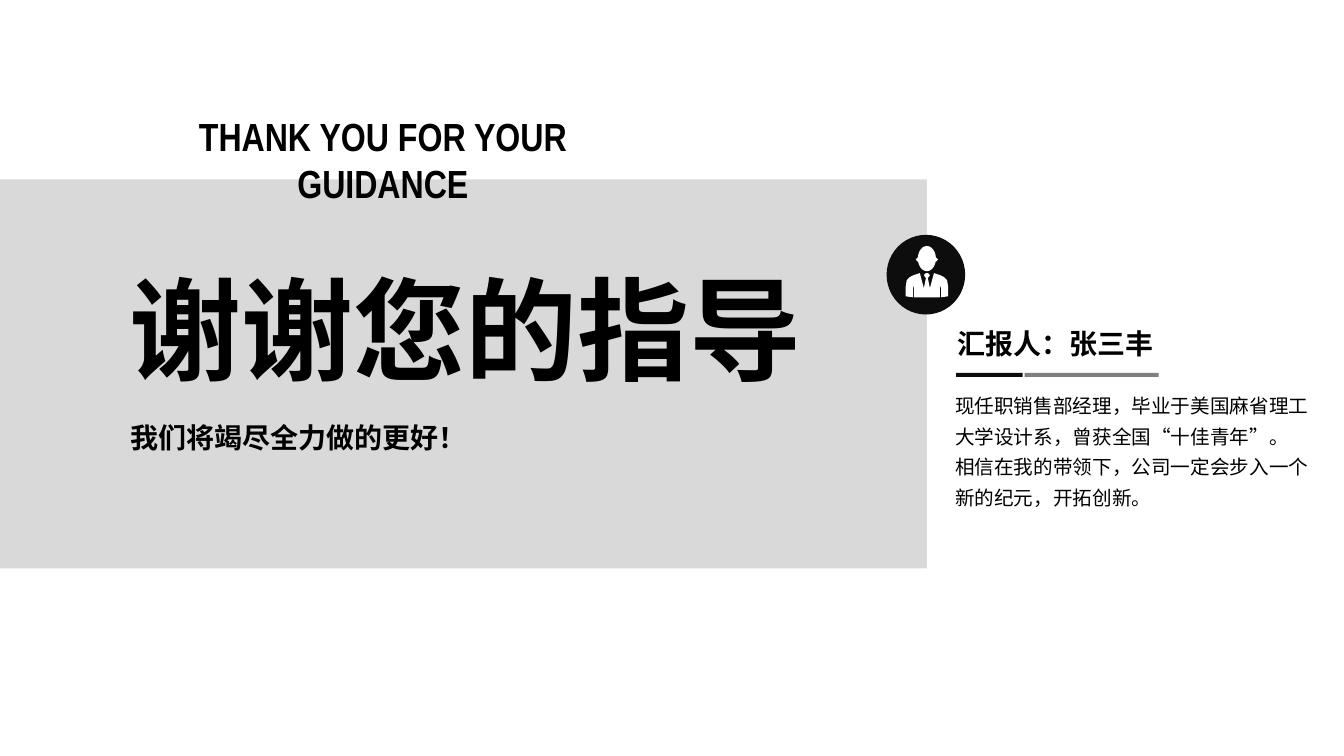
from lxml import etree
from pptx import Presentation
from pptx.dml.color import RGBColor
from pptx.enum.shapes import MSO_SHAPE
from pptx.enum.text import MSO_ANCHOR, PP_ALIGN
from pptx.oxml.ns import qn
from pptx.util import Inches, Pt

RECTANGLE, OVAL = MSO_SHAPE.RECTANGLE, MSO_SHAPE.OVAL
LEFT, CENTER = PP_ALIGN.LEFT, PP_ALIGN.CENTER
TOP, MIDDLE = MSO_ANCHOR.TOP, MSO_ANCHOR.MIDDLE
CHINESE_FONT, LATIN_FONT = "Noto Sans CJK SC", "Arial Narrow"
COLORS = {
    "text": "000000",
    "panel": "D9D9D9",
    "dark": "0D0D0D",
    "gray": "808080",
    "white": "FFFFFF",
}

deck = Presentation()
deck.slide_width, deck.slide_height = Inches(13.34), Inches(7.5)
page = deck.slides.add_slide(deck.slide_layouts[6])


def paint(shape, color):
    """Give a shape a plain fill without line or shadow."""
    shape.shadow.inherit = False
    shape.fill.solid()
    shape.fill.fore_color.rgb = RGBColor.from_string(COLORS[color])
    shape.line.fill.background()


def add_text(text, place, size, font=CHINESE_FONT, bold=True, align=LEFT,
             anchor=TOP, inset=(0.1, 0.05), spacing=None):
    """Add a text box with one paragraph for each line of the text."""
    box = page.shapes.add_textbox(*map(Inches, place))
    frame = box.text_frame
    frame.word_wrap = True
    frame.vertical_anchor = anchor
    frame.margin_left = frame.margin_right = Inches(inset[0])
    frame.margin_top = frame.margin_bottom = Inches(inset[1])
    frame.text = text
    for para in frame.paragraphs:
        para.alignment = align
        para.line_spacing = spacing
        for span in para.runs:
            span.font.size = Pt(size)
            span.font.bold = bold
            span.font.name = font
            span.font.color.rgb = RGBColor.from_string(COLORS["text"])
            east_asian = etree.SubElement(span.font._element, qn("a:ea"))
            east_asian.set("typeface", font)


# Gray panel with the closing words
panel = page.shapes.add_shape(RECTANGLE, 0, Inches(1.78), Inches(9.2), Inches(3.86))
paint(panel, "panel")
add_text("谢谢您的指导", (1.19, 2.54, 7.08, 1.71), 80)
add_text("我们将竭尽全力做的更好！", (0.45, 3.9, 5.03, 0.88), 20,
         align=CENTER, anchor=MIDDLE)
add_text("THANK YOU FOR YOUR GUIDANCE", (1.23, 1.04, 5.14, 1.08), 28,
         font=LATIN_FONT, align=CENTER, inset=(0.13, 0.07))

# Round badge: disc, head and ears, then a suit mirrored about its middle
badge_parts = [
    (OVAL, (8.8, 2.33, 0.78, 0.79), "dark"),
    (OVAL, (9.11, 2.44, 0.18, 0.25), "white"),
    (OVAL, (9.09, 2.54, 0.22, 0.07), "white"),
]
# Two-tone rule under the speaker's name
rule_parts = [
    (RECTANGLE, (9.49, 3.7, 0.66, 0.04), "dark"),
    (RECTANGLE, (10.17, 3.7, 1.33, 0.04), "gray"),
]
for kind, place, color in badge_parts + rule_parts:
    paint(page.shapes.add_shape(kind, *map(Inches, place)), color)

SUIT_MIDDLE = 9.2
half_suit = [
    (0, 2.71), (0.01, 2.71), (0.03, 2.73), (0.01, 2.76), (0.03, 2.86),
    (0.07, 2.71), (0.13, 2.73), (0.17, 2.75), (0.2, 2.78), (0.21, 2.84),
    (0.21, 2.94), (0.14, 2.95), (0.14, 2.86), (0.13, 2.83), (0.13, 2.95),
]
outline = [(SUIT_MIDDLE + x, y) for x, y in half_suit]
outline += [(SUIT_MIDDLE - x, y) for x, y in reversed(half_suit)]
points = [(Inches(x), Inches(y)) for x, y in outline]
builder = page.shapes.build_freeform(*points[0])
builder.add_line_segments(points[1:], close=True)
paint(builder.convert_to_shape(), "white")

# Speaker
add_text("汇报人：张三丰", (9.43, 3.2, 2.3, 0.41), 20, inset=(0.07, 0.04))
add_text("现任职销售部经理，毕业于美国麻省理工大学设计系，曾获全国“十佳青年”。\n"
         "相信在我的带领下，公司一定会步入一个新的纪元，开拓创新。",
         (9.41, 3.8, 3.79, 1.3), 14, bold=False, inset=(0.07, 0.04), spacing=1.3)

deck.save("out.pptx")
